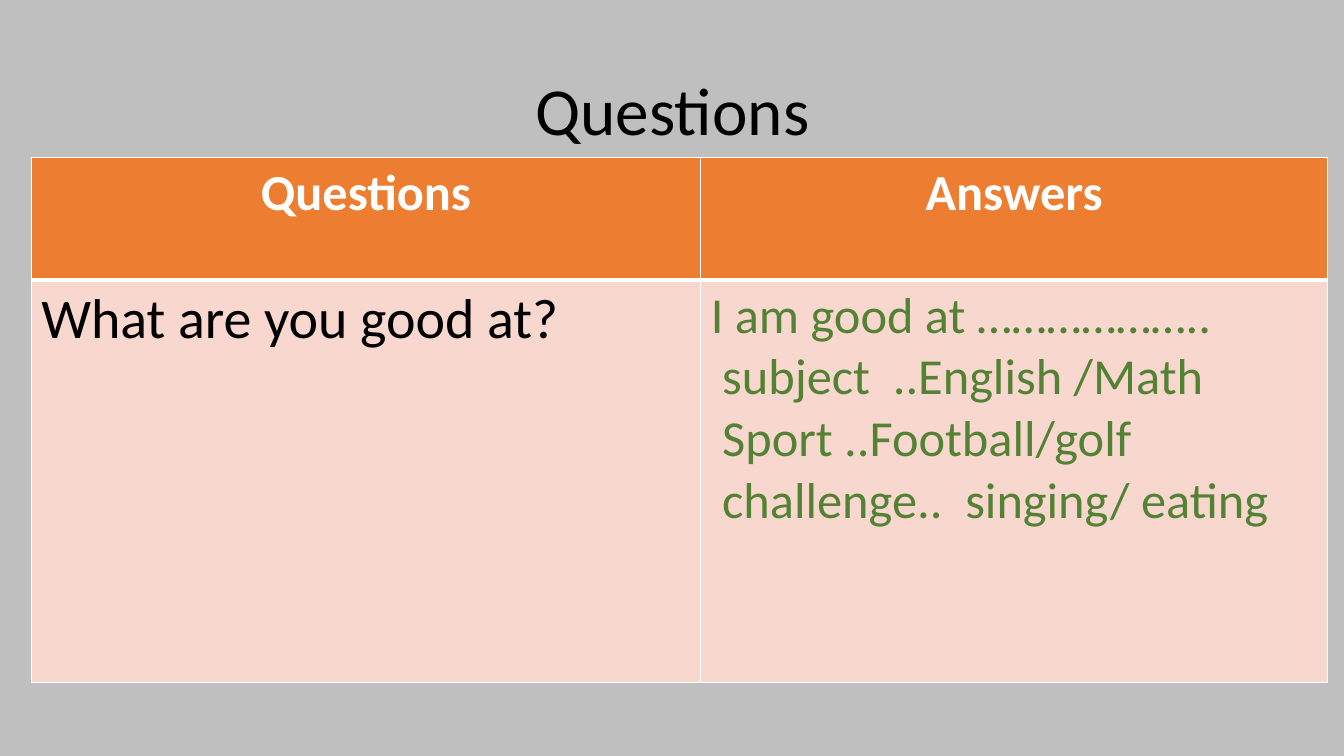
from dataclasses import dataclass

from lxml import etree
from pptx import Presentation
from pptx.dml.color import RGBColor
from pptx.enum.text import MSO_ANCHOR, PP_ALIGN
from pptx.oxml.ns import qn
from pptx.table import _Cell
from pptx.text.text import TextFrame
from pptx.util import Inches, Pt

CENTER, LEFT = PP_ALIGN.CENTER, PP_ALIGN.LEFT
MIDDLE = MSO_ANCHOR.MIDDLE

COLORS = {
    "background": "BFBFBF",
    "header": "ED7D31",
    "body": "F8D7CE",
    "border": "FFFFFF",
    "white": "FFFFFF",
    "black": "000000",
    "green": "548235",
}
COLUMN_WIDTHS = (6.64, 6.22)
ROW_HEIGHTS = (1.22, 3.99)
HEADER_RULE = 3


@dataclass(frozen=True)
class Entry:
    lines: tuple[str, ...]
    size: int
    color: str
    bold: bool = False
    align: PP_ALIGN = LEFT
    spacing: float = 1.0


TITLE = Entry(("Questions",), 48, "black", align=CENTER, spacing=0.9)
HEADERS = tuple(
    Entry((label,), 36, "white", bold=True, align=CENTER)
    for label in ("Questions", "Answers")
)
QUESTION = Entry(("What are you good at?",), 40, "black")
ANSWER = Entry(
    (
        "I am good at ………………..",
        " subject  ..English /Math",
        " Sport ..Football/golf",
        " challenge..  singing/ eating",
    ),
    36,
    "green",
)
ROWS = (HEADERS, (QUESTION, ANSWER))


def rgb(name: str) -> RGBColor:
    return RGBColor.from_string(COLORS[name])


def write_entry(frame: TextFrame, entry: Entry) -> None:
    font_format = {"name": "Calibri", "size": Pt(entry.size), "bold": entry.bold}
    for index, line in enumerate(entry.lines):
        paragraph = frame.add_paragraph() if index else frame.paragraphs[0]
        paragraph.alignment = entry.align
        paragraph.line_spacing = entry.spacing
        run = paragraph.add_run()
        run.text = line
        for attribute, value in font_format.items():
            setattr(run.font, attribute, value)
        run.font.color.rgb = rgb(entry.color)


def set_borders(cell: _Cell, widths: dict[str, float]) -> None:
    """Draw the cell's edges; widths maps L, R, T, B, in that order, to points."""
    properties = cell._tc.get_or_add_tcPr()
    for position, (side, width) in enumerate(widths.items()):
        line = etree.Element(qn(f"a:ln{side}"), w=str(Pt(width)))
        fill = etree.SubElement(line, qn("a:solidFill"))
        etree.SubElement(fill, qn("a:srgbClr"), val=COLORS["border"])
        properties.insert(position, line)


def add_title(slide) -> None:
    title = slide.shapes.add_textbox(
        Inches(0.92), Inches(0.4), Inches(11.5), Inches(1.45)
    )
    title.text_frame.word_wrap = True
    title.text_frame.vertical_anchor = MIDDLE
    write_entry(title.text_frame, TITLE)


def add_question_table(slide) -> None:
    table = slide.shapes.add_table(
        len(ROWS), len(COLUMN_WIDTHS), Inches(0.31), Inches(1.56),
        Inches(sum(COLUMN_WIDTHS)), Inches(sum(ROW_HEIGHTS)),
    ).table
    table.horz_banding = False
    for column, width in zip(table.columns, COLUMN_WIDTHS):
        column.width = Inches(width)
    for row, height in zip(table.rows, ROW_HEIGHTS):
        row.height = Inches(height)
    for row_index, entries in enumerate(ROWS):
        is_header = row_index == 0
        for column_index, entry in enumerate(entries):
            cell = table.cell(row_index, column_index)
            cell.fill.solid()
            cell.fill.fore_color.rgb = rgb("header" if is_header else "body")
            set_borders(cell, {
                "L": 1,
                "R": 1,
                "T": 1 if is_header else HEADER_RULE,
                "B": HEADER_RULE if is_header else 1,
            })
            write_entry(cell.text_frame, entry)


def main() -> None:
    presentation = Presentation()
    presentation.slide_width = Inches(13.33)
    presentation.slide_height = Inches(7.5)
    slide = presentation.slides.add_slide(presentation.slide_layouts[6])
    slide.background.fill.solid()
    slide.background.fill.fore_color.rgb = rgb("background")
    add_title(slide)
    add_question_table(slide)
    presentation.save("out.pptx")


if __name__ == "__main__":
    main()
